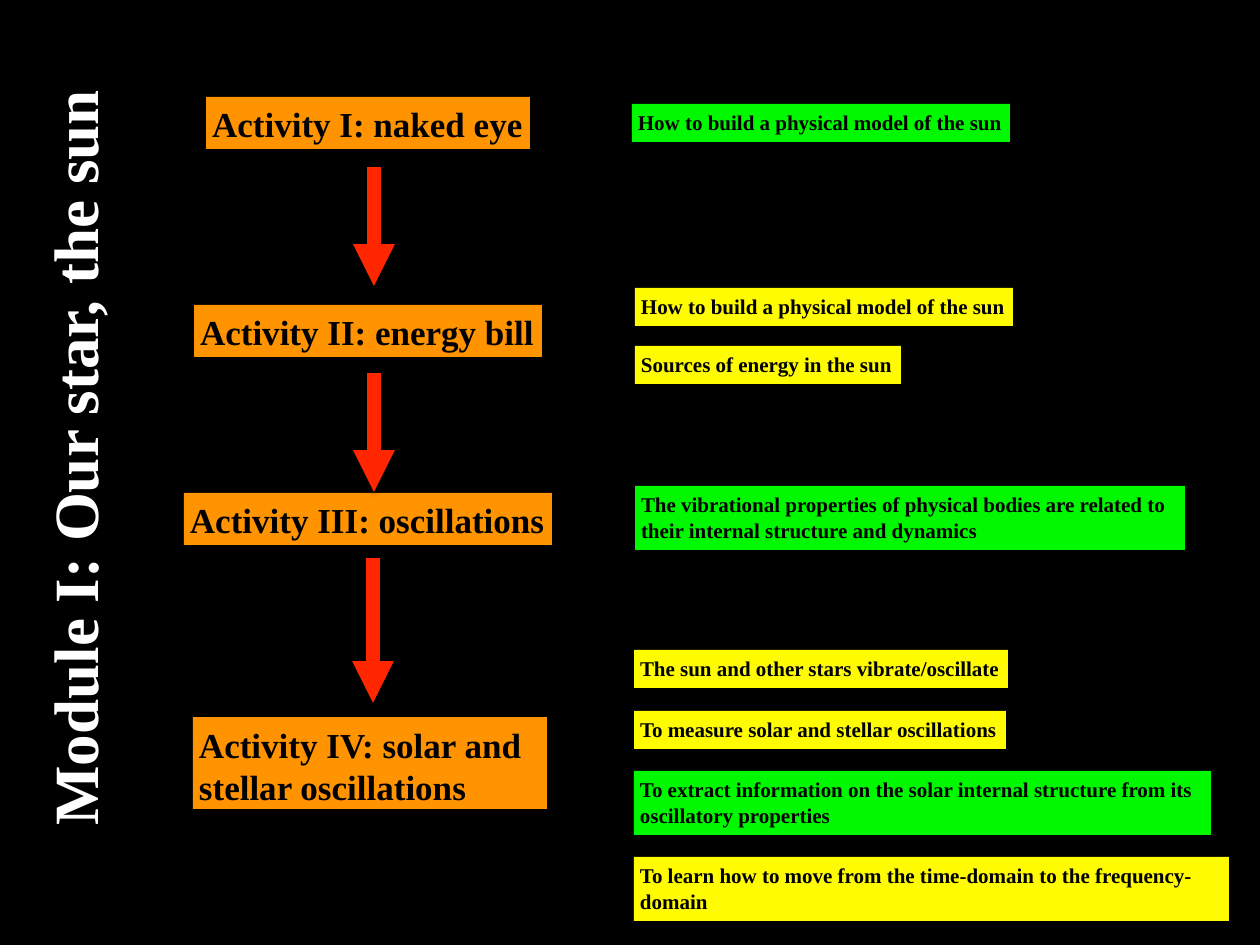
from dataclasses import dataclass

from lxml import etree
from pptx import Presentation
from pptx.dml.color import RGBColor
from pptx.enum.shapes import MSO_CONNECTOR, MSO_SHAPE
from pptx.enum.text import MSO_ANCHOR, MSO_AUTO_SIZE, PP_ALIGN
from pptx.oxml import parse_xml
from pptx.oxml.ns import nsdecls, qn
from pptx.util import Pt

RECT = MSO_SHAPE.RECTANGLE
LINE = MSO_CONNECTOR.STRAIGHT
TOP = MSO_ANCHOR.TOP
LEFT = PP_ALIGN.LEFT
GROW = MSO_AUTO_SIZE.SHAPE_TO_FIT_TEXT
SCALE = 914400 / 126
INSET = 6


@dataclass(frozen=True)
class Theme:
    """Colours and type sizes of the slide."""
    black: str = "000000"
    white: str = "FFFFFF"
    orange: str = "FF9300"
    green: str = "00F900"
    yellow: str = "FFFB00"
    red: str = "FF2600"
    font: str = "Times New Roman"
    head: int = 36
    step: int = 20
    note: int = 12
    stroke: int = 8


THEME = Theme()

STEPS = [
    (206, 97, 324, 52, ["Activity I: naked eye"]),
    (194, 305, 348, 52, ["Activity II: energy bill"]),
    (184, 493, 368, 52, ["Activity III: oscillations"]),
    (193, 717, 354, 92, ["Activity IV: solar and", "stellar oscillations"]),
]
ARROWS = [(374, 167, 286), (374, 373, 492), (373, 558, 703)]
MODEL = "How to build a physical model of the sun"
NOTES = [
    (632, 104, 378, 38, THEME.green, [MODEL]),
    (635, 288, 378, 38, THEME.yellow, [MODEL]),
    (635, 346, 266, 38, THEME.yellow, ["Sources of energy in the sun"]),
    (635, 486, 550, 64, THEME.green,
     ["The vibrational properties of physical bodies are related to",
      "their internal structure and dynamics"]),
    (634, 650, 374, 38, THEME.yellow,
     ["The sun and other stars vibrate/oscillate"]),
    (634, 711, 372, 38, THEME.yellow,
     ["To measure solar and stellar oscillations"]),
    (634, 771, 577, 64, THEME.green,
     ["To extract information on the solar internal structure from its",
      "oscillatory properties"]),
    (634, 857, 595, 64, THEME.yellow,
     ["To learn how to move from the time-domain to the frequency-domain"]),
]


def px(size):
    """Turn pixels into EMU."""
    return round(size * SCALE)


def rgb(code):
    """Turn a hex code into a colour."""
    return RGBColor.from_string(code)


def write(frame, lines, size, color):
    """Fill a text frame with bold left-aligned lines."""
    frame.word_wrap = True
    frame.auto_size = GROW
    frame.vertical_anchor = TOP
    frame.margin_left = frame.margin_right = px(INSET)
    frame.margin_top = frame.margin_bottom = px(INSET)
    for i, line in enumerate(lines):
        para = frame.add_paragraph() if i else frame.paragraphs[0]
        para.text = line
        para.alignment = LEFT
        font = para.font
        font.name, font.size, font.bold = THEME.font, Pt(size), True
        font.color.rgb = rgb(color)


def add_box(slide, area, fill, lines, size):
    """Add a filled label without an outline."""
    box = slide.shapes.add_shape(RECT, *map(px, area))
    box.shadow.inherit = False
    box.fill.solid()
    box.fill.fore_color.rgb = rgb(fill)
    box.line.fill.background()
    write(box.text_frame, lines, size, THEME.black)


def add_title(slide, text):
    """Add the title that reads upwards along the left edge."""
    box = slide.shapes.add_textbox(*map(px, (-304, 415, 750, 83)))
    box.rotation = 270
    write(box.text_frame, [text], THEME.head, THEME.white)


def add_arrow(slide, x, top, end):
    """Add a thick downward arrow with a soft shadow."""
    arrow = slide.shapes.add_connector(LINE, px(x), px(top), px(x), px(end))
    arrow.line.color.rgb = rgb(THEME.red)
    arrow.line.width = Pt(THEME.stroke)
    etree.SubElement(arrow.line._get_or_add_ln(), qn("a:tailEnd"),
                     type="triangle")
    arrow._element.spPr.append(parse_xml(
        f'<a:effectLst {nsdecls("a")}>'
        f'<a:outerShdw blurRad="{Pt(3)}" dist="{Pt(1.6)}" dir="5400000" '
        f'rotWithShape="0"><a:srgbClr val="{THEME.black}">'
        '<a:alpha val="38000"/></a:srgbClr></a:outerShdw></a:effectLst>'))


def main():
    """Build the slide and save it."""
    deck = Presentation()
    deck.slide_width, deck.slide_height = px(1260), px(945)
    slide = deck.slides.add_slide(deck.slide_layouts[6])
    slide.background.fill.solid()
    slide.background.fill.fore_color.rgb = rgb(THEME.black)
    for *area, lines in STEPS:
        add_box(slide, area, THEME.orange, lines, THEME.step)
    for *area, fill, lines in NOTES:
        add_box(slide, area, fill, lines, THEME.note)
    add_title(slide, "Module I: Our star, the sun")
    for arrow in ARROWS:
        add_arrow(slide, *arrow)
    deck.save("out.pptx")


if __name__ == "__main__":
    main()
